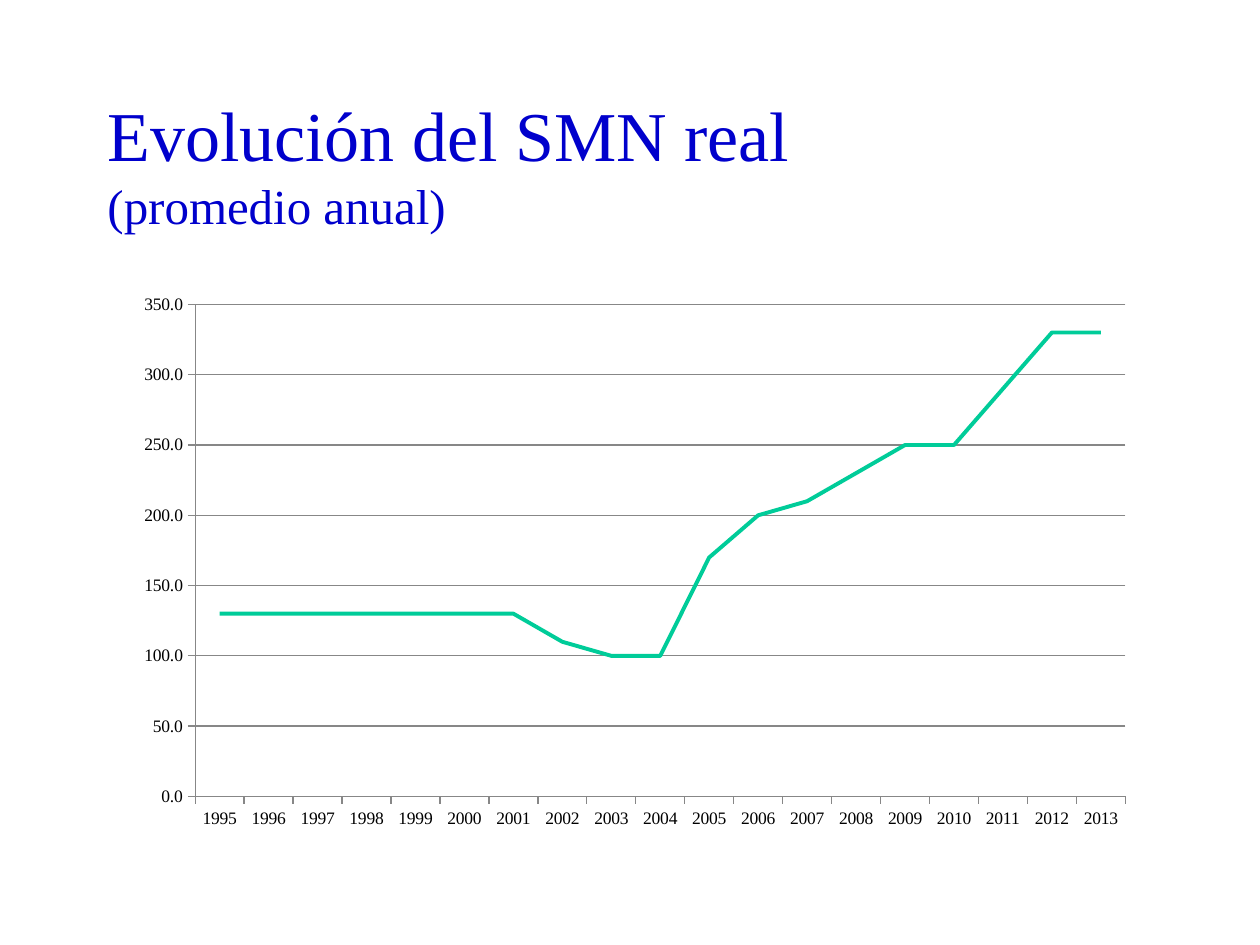
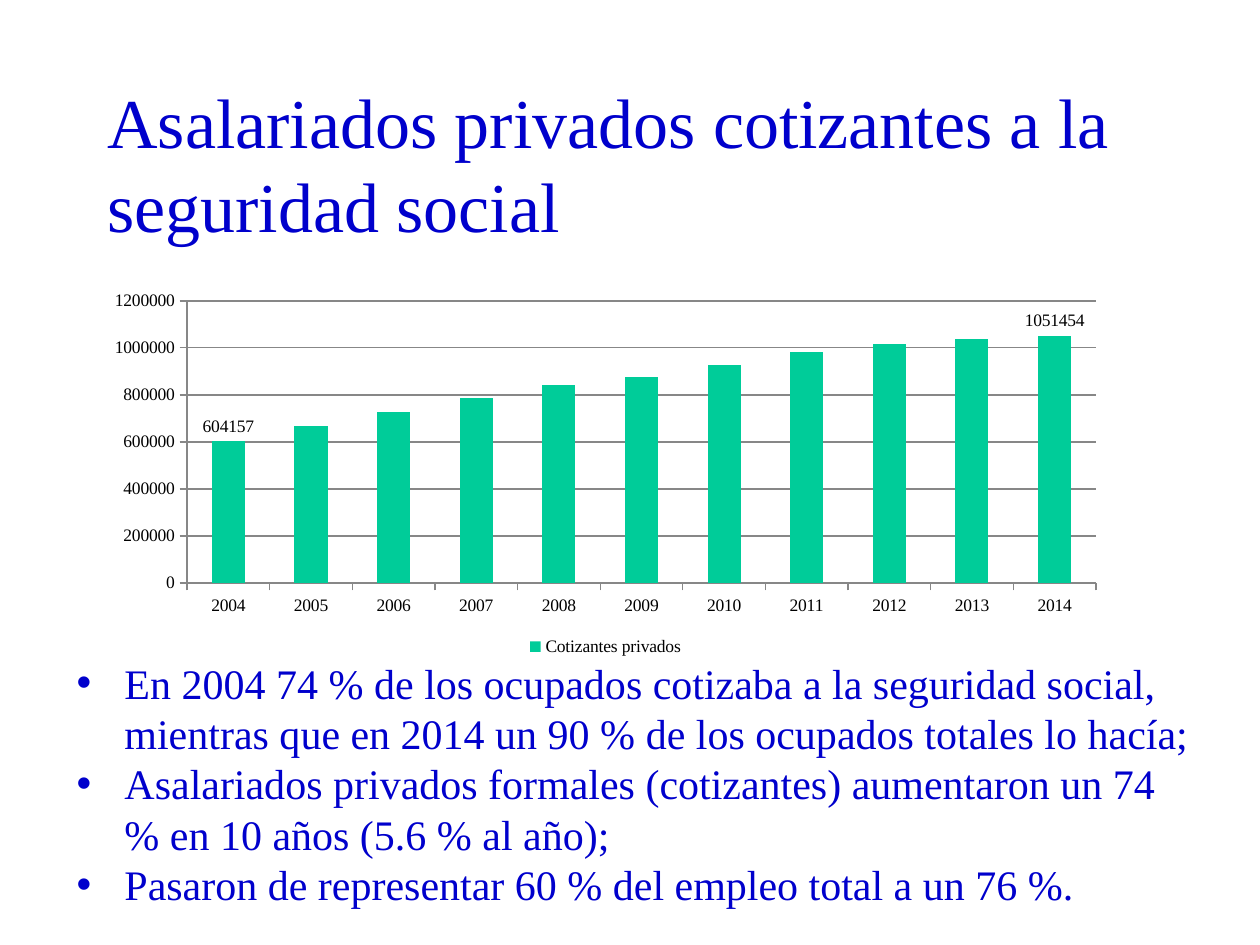
from dataclasses import dataclass

from lxml.etree import SubElement
from pptx import Presentation
from pptx.chart.data import CategoryChartData
from pptx.dml.color import RGBColor
from pptx.enum.chart import XL_CHART_TYPE as ChartType
from pptx.enum.chart import XL_LABEL_POSITION as LabelPosition
from pptx.enum.chart import XL_LEGEND_POSITION as LegendPosition
from pptx.enum.chart import XL_MARKER_STYLE as Marker
from pptx.enum.chart import XL_TICK_MARK as Tick
from pptx.enum.text import MSO_ANCHOR as Anchor
from pptx.enum.text import MSO_AUTO_SIZE as AutoSize
from pptx.oxml.ns import qn
from pptx.slide import Slide
from pptx.util import Emu, Inches, Pt

WIDTH, HEIGHT = Inches(10), Inches(7.5)
COLUMNS, ROWS = 100, 75
FONT = "Times New Roman"
BLUE, GREEN, GREY, BLACK = "0000CC", "00CC99", "878787", "000000"


@dataclass(frozen=True)
class Area:
    column: float
    row: float
    columns: float
    rows: float

    def frame(self) -> tuple[Emu, Emu, Emu, Emu]:
        across, down = WIDTH / COLUMNS, HEIGHT / ROWS
        return (Emu(int(self.column * across)), Emu(int(self.row * down)),
                Emu(int(self.columns * across)), Emu(int(self.rows * down)))


@dataclass(frozen=True)
class ChartPlan:
    kind: ChartType
    area: Area
    first_year: int
    series_name: str
    values: tuple[int, ...]
    number_format: str
    legend: bool = False
    labelled: tuple[int, ...] = ()


@dataclass(frozen=True)
class SlidePlan:
    title: tuple[tuple[str, int], ...]
    chart: ChartPlan
    bullets: tuple[str, ...] = ()


TITLE_AREA = Area(7.55, 6.65, 85, 12.5)
BULLETS_AREA = Area(5.1, 51.65, 90.6, 21.2)

SLIDES = (
    SlidePlan(
        title=(("Evolución del SMN real ", 40), ("(promedio anual)", 28)),
        chart=ChartPlan(
            ChartType.LINE, Area(9.84, 22.5, 81.1, 44.15), 1995, "Series 1",
            (130, 130, 130, 130, 130, 130, 130, 110, 100, 100,
             170, 200, 210, 230, 250, 250, 290, 330, 330),
            "0.0"),
    ),
    SlidePlan(
        title=(("Asalariados privados cotizantes a la seguridad social", 40),),
        chart=ChartPlan(
            ChartType.COLUMN_CLUSTERED, Area(7.5, 22.5, 81.1, 30), 2004,
            "Cotizantes privados",
            (604157, 668541, 725079, 786797, 840910, 875419,
             925050, 982847, 1014797, 1039210, 1051454),
            "General", legend=True, labelled=(0, 10)),
        bullets=(
            "En 2004 74 % de los ocupados cotizaba a la seguridad social, "
            "mientras que en 2014 un 90 % de los ocupados totales lo hacía;",
            "Asalariados privados formales (cotizantes) aumentaron un 74 % "
            "en 10 años (5.6 % al año);",
            "Pasaron de representar 60 % del empleo total a un 76 %.",
        ),
    ),
)


def colour(code: str) -> RGBColor:
    return RGBColor.from_string(code)


def apply(target, **values) -> None:
    for name, value in values.items():
        setattr(target, name, value)


def style_font(font, size: float, code: str) -> None:
    apply(font, name=FONT, size=Pt(size))
    font.color.rgb = colour(code)


def style_line(line, code: str, width: float) -> None:
    line.color.rgb = colour(code)
    line.width = Pt(width)


def add_title(page: Slide, parts: tuple[tuple[str, int], ...]) -> None:
    box = page.shapes.add_textbox(*TITLE_AREA.frame())
    apply(box.text_frame, word_wrap=True, vertical_anchor=Anchor.MIDDLE)
    para = box.text_frame.paragraphs[0]
    for index, (text, size) in enumerate(parts):
        if index:
            para.add_line_break()
        span = para.add_run()
        span.text = text
        style_font(span.font, size, BLUE)


def add_bullets(page: Slide, texts: tuple[str, ...]) -> None:
    box = page.shapes.add_textbox(*BULLETS_AREA.frame())
    apply(box.text_frame, word_wrap=True, auto_size=AutoSize.SHAPE_TO_FIT_TEXT)
    indent = Inches(0.38)
    for index, text in enumerate(texts):
        para = box.text_frame.add_paragraph() if index else box.text_frame.paragraphs[0]
        properties = para._p.get_or_add_pPr()
        properties.set("marL", str(indent))
        properties.set("indent", str(-indent))
        SubElement(properties, qn("a:buFont"), typeface="Arial")
        SubElement(properties, qn("a:buChar"), char="•")
        span = para.add_run()
        span.text = text
        style_font(span.font, 24, BLUE)


def add_data_chart(page: Slide, plan: ChartPlan) -> None:
    data = CategoryChartData(number_format=plan.number_format)
    data.categories = [str(plan.first_year + step) for step in range(len(plan.values))]
    data.add_series(plan.series_name, plan.values)
    chart = page.shapes.add_chart(plan.kind, *plan.area.frame(), data).chart
    apply(chart, has_title=False, has_legend=plan.legend)
    style_font(chart.font, 10, BLACK)
    if plan.legend:
        apply(chart.legend, position=LegendPosition.BOTTOM, include_in_layout=False)

    for axis in (chart.category_axis, chart.value_axis):
        apply(axis, major_tick_mark=Tick.OUTSIDE, minor_tick_mark=Tick.NONE)
        style_line(axis.format.line, GREY, 0.75)
    chart.category_axis.has_major_gridlines = False
    chart.value_axis.has_major_gridlines = True
    style_line(chart.value_axis.major_gridlines.format.line, GREY, 0.75)
    apply(chart.value_axis.tick_labels,
          number_format=plan.number_format, number_format_is_linked=False)

    plot = chart.plots[0]
    plot.vary_by_categories = False
    series = plot.series[0]
    if plan.kind == ChartType.LINE:
        series.smooth = False
        series.marker.style = Marker.NONE
        style_line(series.format.line, GREEN, 2.25)
    else:
        plot.gap_width = 150
        series.format.fill.solid()
        series.format.fill.fore_color.rgb = colour(GREEN)
    if plan.labelled:
        series.data_labels.show_value = False
    for index in plan.labelled:
        label = series.points[index].data_label
        label.position = LabelPosition.OUTSIDE_END
        style_font(label.font, 10, BLACK)


def main() -> None:
    deck = Presentation()
    apply(deck, slide_width=WIDTH, slide_height=HEIGHT)
    for plan in SLIDES:
        page = deck.slides.add_slide(deck.slide_layouts[6])
        add_title(page, plan.title)
        add_data_chart(page, plan.chart)
        if plan.bullets:
            add_bullets(page, plan.bullets)
    deck.save("out.pptx")


if __name__ == "__main__":
    main()
